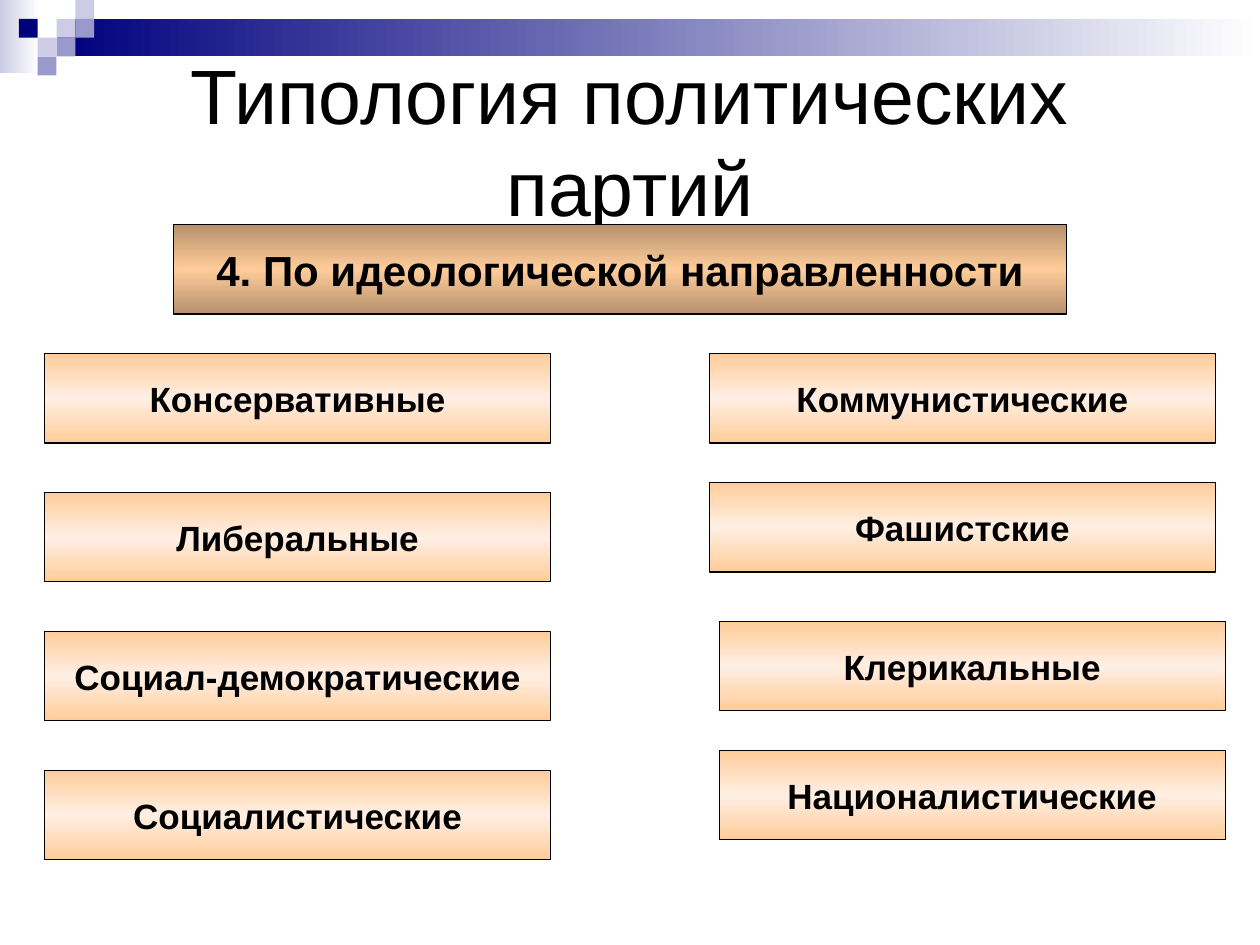
from lxml import etree
from pptx import Presentation
from pptx import util as u
from pptx.dml.color import RGBColor
from pptx.enum import shapes, text
from pptx.oxml.ns import qn

BLACK, NAVY, LILAC, VIOLET, WHITE = "000000", "00007D", "CCCCE6", "9999CC", "FFFFFF"
PEACH, CREAM = "FFCC99", "FFEFE3"
LEFT = ["Консервативные", "Либеральные", "Социал-демократические", "Социалистические"]
RIGHT = ["Коммунистические", "Фашистские", "Клерикальные", "Националистические"]


def rgb(value):
    """Return the colour for a hex string."""
    return RGBColor.from_string(value)


def set_gradient(sp, colors, angle=0, shades=None):
    """Fill a shape with evenly spaced colours, shading the given stops."""
    sp.fill.gradient()
    sp.fill.gradient_angle = angle
    stops = sp._element.spPr.find(qn("a:gradFill")).find(qn("a:gsLst"))
    for stop in list(stops):
        stops.remove(stop)
    for i, color in enumerate(colors):
        pos = 100000 * i // (len(colors) - 1)
        stop = etree.SubElement(stops, qn("a:gs"), pos=str(pos))
        clr = etree.SubElement(stop, qn("a:srgbClr"), val=color)
        if shades and i in shades:
            etree.SubElement(clr, qn("a:shade"), val=str(shades[i]))


def add_rect(s, box, colors, **gradient):
    """Add a borderless rectangle with a solid or gradient fill."""
    sp = s.shapes.add_shape(shapes.MSO_SHAPE.RECTANGLE, *map(u.Cm, box))
    sp.shadow.inherit = False
    sp.line.fill.background()
    if len(colors) == 1:
        sp.fill.solid()
        sp.fill.fore_color.rgb = rgb(colors[0])
    else:
        set_gradient(sp, colors, **gradient)
    return sp


def write(sp, content, wrap, **font):
    """Put one centred black paragraph in a shape."""
    tf = sp.text_frame
    frame = {"word_wrap": wrap, "auto_size": text.MSO_AUTO_SIZE.NONE,
             "vertical_anchor": text.MSO_ANCHOR.MIDDLE}
    for name, value in frame.items():
        setattr(tf, name, value)
    p = tf.paragraphs[0]
    p.alignment = text.PP_ALIGN.CENTER
    r = p.add_run()
    r.text = content
    for name, value in {"name": "Arial", **font}.items():
        setattr(r.font, name, value)
    r.font.color.rgb = rgb(BLACK)


def add_label(s, box, content, size, colors, **gradient):
    """Add an outlined gradient box with bold text."""
    sp = add_rect(s, box, colors, angle=90, **gradient)
    sp.line.color.rgb = rgb(BLACK)
    sp.line.width = u.Pt(0.75)
    write(sp, content, False, size=u.Pt(size), bold=True)


def add_header(s, left, top, width, cell=0.38):
    """Draw the gradient bar and the mosaic of small squares."""
    add_rect(s, (left, top, 0.79, 1.47), [LILAC, WHITE])
    add_rect(s, (left + 3 * cell, top + cell, width - 3 * cell, 2 * cell), [NAVY, WHITE])
    mosaic = [(3, 1, LILAC), (4, 0, LILAC), (4, 1, VIOLET), (2, 2, LILAC),
              (1, 1, NAVY), (3, 2, VIOLET), (2, 3, VIOLET)]
    for col, row, color in mosaic:
        add_rect(s, (left + col * cell, top + row * cell, cell, cell), [color])


def add_title(s, box, content):
    """Move the title placeholder and fill it."""
    sp = s.shapes.title
    for name, value in zip(("left", "top", "width", "height"), box):
        setattr(sp, name, u.Cm(value))
    write(sp, content, True, size=u.Pt(44), bold=False)


def add_column(s, left, top, width, height, names, offsets):
    """Place named boxes at their offsets from the column corner."""
    for name, (dx, dy) in zip(names, offsets):
        add_label(s, (left + dx, top + dy, width, height), name, 20, [PEACH, CREAM, PEACH])


def main():
    """Build and save the slide."""
    prs = Presentation()
    prs.slide_width, prs.slide_height = u.Cm(25.4), u.Cm(19.05)
    s = prs.slides.add_slide(prs.slide_layouts[5])
    add_header(s, 0, 0, 25.4)
    add_title(s, (1.27, 1.27, 22.86, 3.1), "Типология политических партий")
    add_label(s, (3.5, 4.53, 18, 1.8), "4. По идеологической направленности", 24,
              [PEACH] * 3, shades={0: 46275, 2: 46275})
    add_column(s, 0.9, 7.13, 10.2, 1.8, LEFT, [(0, 2.8 * i) for i in range(4)])
    add_column(s, 14.3, 7.13, 10.2, 1.8, RIGHT, [(0, 0), (0, 2.6), (0.2, 5.4), (0.2, 8)])
    prs.save("out.pptx")


if __name__ == "__main__":
    main()
